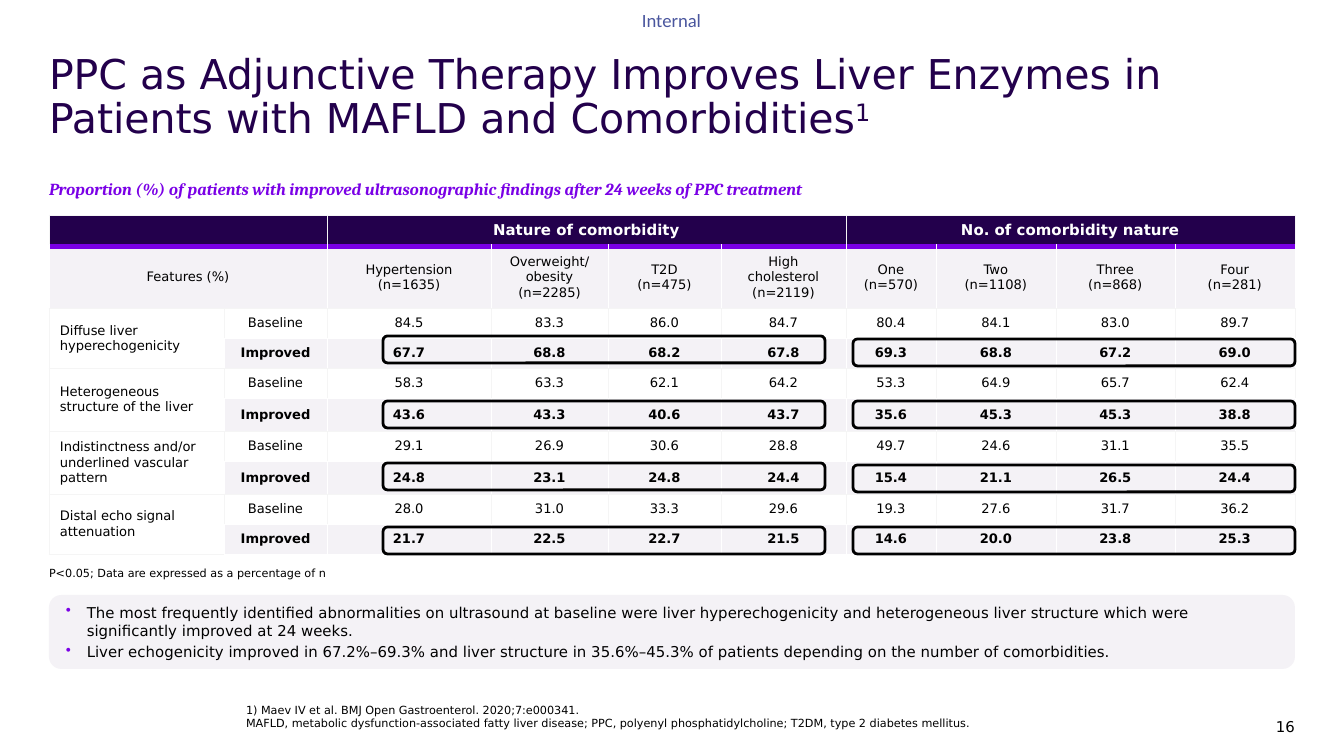
from lxml import etree
from pptx import Presentation
from pptx.dml.color import RGBColor
from pptx.enum.shapes import MSO_SHAPE
from pptx.enum.text import MSO_ANCHOR, PP_ALIGN
from pptx.oxml.ns import qn
from pptx.util import Pt

ROUND = MSO_SHAPE.ROUNDED_RECTANGLE
TOP, MID, LOW = MSO_ANCHOR.TOP, MSO_ANCHOR.MIDDLE, MSO_ANCHOR.BOTTOM
LEFT, CENTER, RIGHT = PP_ALIGN.LEFT, PP_ALIGN.CENTER, PP_ALIGN.RIGHT
BLACK = RGBColor(0x00, 0x00, 0x00)
WHITE = RGBColor(0xFF, 0xFF, 0xFF)
NAVY = RGBColor(0x23, 0x00, 0x4C)
PURPLE = RGBColor(0x7A, 0x00, 0xE6)
PALE = RGBColor(0xF4, 0xF2, 0xF6)
GREY = RGBColor(0xF5, 0xF5, 0xF5)
BLUE = RGBColor(0x4A, 0x56, 0x9E)
SANS = "DejaVu Sans"
PX = 914400 * 10 // 1344


def write(frame, text, size, color=BLACK, align=LEFT, name=SANS, **style):
    """Fill a frame, one paragraph per line of text."""
    frame.word_wrap = True
    for i, line in enumerate(text.split("\n")):
        para = frame.paragraphs[0] if i == 0 else frame.add_paragraph()
        para.alignment = align
        run = para.add_run()
        run.text = line
        font = {"size": Pt(size), "name": name, **style}
        for key, value in font.items():
            setattr(run.font, key, value)
        run.font.color.rgb = color


def edge(cell, sides, color, width):
    """Draw the given sides (L, R, T, B) of a cell; call before its fill."""
    props = cell._tc.get_or_add_tcPr()
    for side in sides:
        line = etree.SubElement(props, qn(f"a:ln{side}"), w=str(Pt(width)))
        fill = etree.SubElement(line, qn("a:solidFill"))
        etree.SubElement(fill, qn("a:srgbClr"), val=str(color))


deck = Presentation()
deck.slide_width, deck.slide_height = 1344 * PX, 756 * PX
slide = deck.slides.add_slide(deck.slide_layouts[6])
shapes = slide.shapes

# Text boxes
texts = [
    ((642, 9, 66, 23), TOP, "Internal",
     {"size": 10, "color": BLUE, "name": "Calibri"}),
    ((246, 669, 919, 61), LOW,
     "1) Maev IV et al. BMJ Open Gastroenterol. 2020;7:e000341.\n"
     "MAFLD, metabolic dysfunction-associated fatty liver disease; PPC, "
     "polyenyl phosphatidylcholine; T2DM, type 2 diabetes mellitus.",
     {"size": 6}),
    ((1225, 704, 70, 31), LOW, "16", {"size": 8, "align": RIGHT}),
    ((49, 179, 1247, 23), TOP,
     "Proportion (%) of patients with improved ultrasonographic findings "
     "after 24 weeks of PPC treatment",
     {"size": 9, "color": PURPLE, "name": "Cambria", "bold": True, "italic": True}),
    ((49, 54, 1247, 106), TOP,
     "PPC as Adjunctive Therapy Improves Liver Enzymes in Patients with "
     "MAFLD and Comorbidities",
     {"size": 22, "color": NAVY}),
    ((49, 566, 792, 14), LOW, "P<0.05; Data are expressed as a percentage of n",
     {"size": 6}),
]
for place, anchor, text, style in texts:
    box = shapes.add_textbox(*[v * PX for v in place])
    frame = box.text_frame
    for side in ("left", "right", "top", "bottom"):
        setattr(frame, f"margin_{side}", 0)
    frame.vertical_anchor = anchor
    write(frame, text, **style)
    if style["size"] == 22:
        para = frame.paragraphs[0]
        para.line_spacing = 0.9
        mark = para.add_run()
        mark.text = "1"
        mark.font.size, mark.font.name = Pt(22), SANS
        mark.font.color.rgb = NAVY
        mark.font._element.set("baseline", "30000")

# Summary panel
panel = shapes.add_shape(ROUND, 49 * PX, 595 * PX, 1246 * PX, 74 * PX)
panel.shadow.inherit = False
panel.fill.solid()
panel.fill.fore_color.rgb = PALE
panel.line.fill.background()
panel.text_frame.vertical_anchor = MID
write(panel.text_frame,
      "The most frequently identified abnormalities on ultrasound at baseline "
      "were liver hyperechogenicity and heterogeneous liver structure which "
      "were significantly improved at 24 weeks.\n"
      "Liver echogenicity improved in 67.2%–69.3% and liver structure in "
      "35.6%–45.3% of patients depending on the number of comorbidities.", 8)
for i, para in enumerate(panel.text_frame.paragraphs):
    props = para._p.get_or_add_pPr()
    props.set("marL", str(21 * PX))
    props.set("indent", str(-21 * PX))
    tint = etree.SubElement(props, qn("a:buClr"))
    etree.SubElement(tint, qn("a:srgbClr"), val=str(PURPLE))
    etree.SubElement(props, qn("a:buChar"), char="•")
    if i:
        para.space_before = Pt(2)

# Table
heads = ["Features (%)", "", "Hypertension (n=1635)", "Overweight/obesity (n=2285)",
         "T2D\n(n=475)", "High cholesterol (n=2119)", "One\n(n=570)",
         "Two\n(n=1108)", "Three\n(n=868)", "Four\n(n=281)"]
groups = [
    ("Diffuse liver hyperechogenicity",
     "84.5 83.3 86.0 84.7 80.4 84.1 83.0 89.7",
     "67.7 68.8 68.2 67.8 69.3 68.8 67.2 69.0"),
    ("Heterogeneous structure of the liver",
     "58.3 63.3 62.1 64.2 53.3 64.9 65.7 62.4",
     "43.6 43.3 40.6 43.7 35.6 45.3 45.3 38.8"),
    ("Indistinctness and/or underlined vascular pattern",
     "29.1 26.9 30.6 28.8 49.7 24.6 31.1 35.5",
     "24.8 23.1 24.8 24.4 15.4 21.1 26.5 24.4"),
    ("Distal echo signal attenuation",
     "28.0 31.0 33.3 29.6 19.3 27.6 31.7 36.2",
     "21.7 22.5 22.7 21.5 14.6 20.0 23.8 25.3"),
]
rows = [["", "", "Nature of comorbidity", "", "", "",
         "No. of comorbidity nature", "", "", ""], heads]
for name, base, better in groups:
    rows.append([name, "Baseline", *base.split()])
    rows.append(["", "Improved", *better.split()])
wides = [175, 103, 164, 117, 113, 125, 90, 120, 119, 120]
highs = [31, 62, 30, 30, 30, 33, 30, 33, 30, 30]

table = shapes.add_table(len(rows), len(wides), 49 * PX, 215 * PX,
                         sum(wides) * PX, sum(highs) * PX).table
for col, wide in zip(table.columns, wides):
    col.width = wide * PX
for row, high in zip(table.rows, highs):
    row.height = high * PX
spans = [(0, 0, 0, 1), (0, 2, 0, 5), (0, 6, 0, 9), (1, 0, 1, 1)]
spans += [(r, 0, r + 1, 0) for r in range(2, 10, 2)]
for r, c, r2, c2 in spans:
    table.cell(r, c).merge(table.cell(r2, c2))

for r, line in enumerate(rows):
    base = r > 1 and r % 2 == 0
    for c, text in enumerate(line):
        cell = table.cell(r, c)
        cell.vertical_anchor = MID
        name = c == 0 and r > 1
        if r == 0:
            edge(cell, "LRT", GREY, 0.2)
            edge(cell, "B", PURPLE, 2.83)
        elif r == 1:
            edge(cell, "LR", WHITE, 0.2)
            edge(cell, "T", PURPLE, 2.83)
            edge(cell, "B", WHITE, 0.2)
        else:
            edge(cell, "LRTB", GREY if base or name else WHITE, 0.2)
        cell.fill.solid()
        cell.fill.fore_color.rgb = NAVY if r == 0 else WHITE if base or name else PALE
        if name:
            cell.margin_left = 11 * PX
        if text:
            write(cell.text_frame, text, 8 if r == 0 else 7,
                  WHITE if r == 0 else BLACK, LEFT if name else CENTER,
                  bold=r == 0 or (r > 1 and not base))
        else:
            etree.SubElement(cell.text_frame.paragraphs[0]._p,
                             qn("a:endParaRPr"), sz="700")

# Frames around the improved values
for x, tops in ((383, (336, 401, 463, 527)), (853, (339, 401, 465, 527))):
    for y in tops:
        ring = shapes.add_shape(ROUND, x * PX, y * PX, 442 * PX, 27 * PX)
        ring.shadow.inherit = False
        ring.fill.background()
        ring.line.color.rgb = BLACK
        ring.line.width = Pt(1.5)

deck.save("out.pptx")
